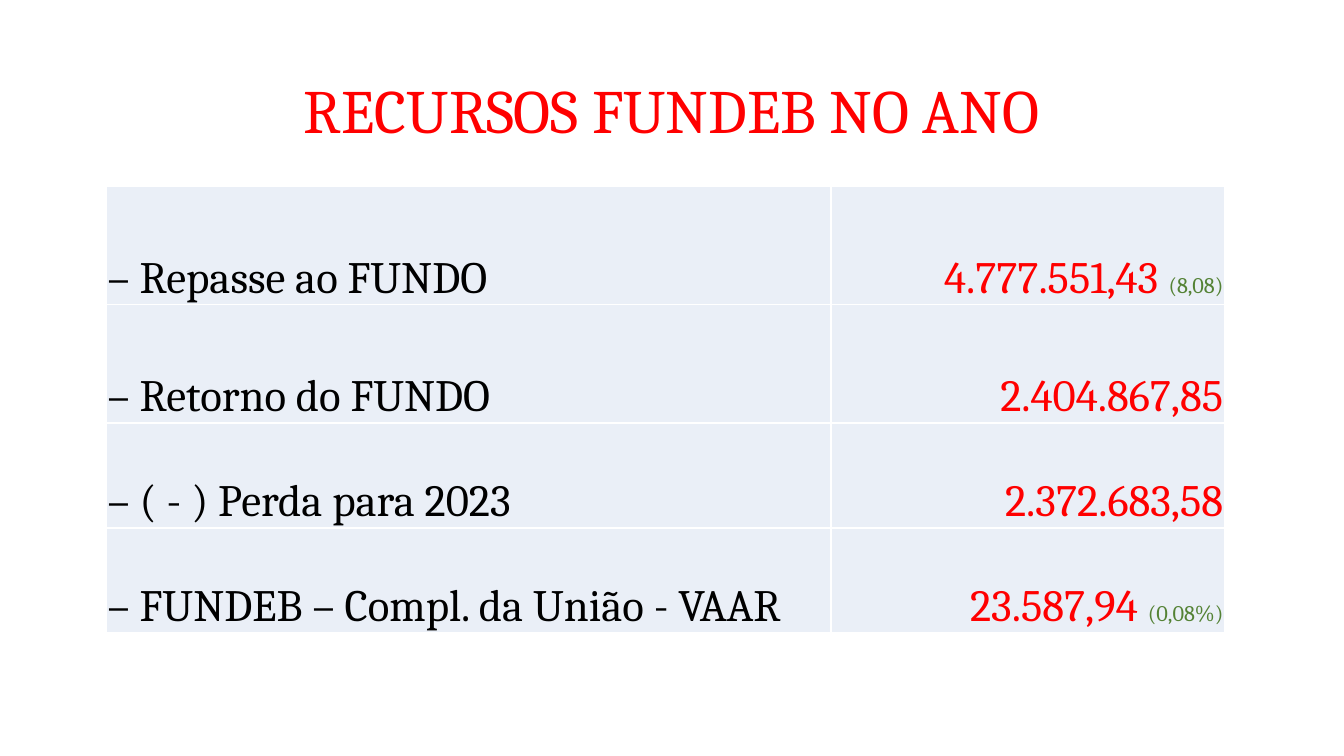
from dataclasses import dataclass

from lxml.etree import SubElement
from pptx import Presentation
from pptx.dml.color import RGBColor
from pptx.enum.text import MSO_ANCHOR, PP_ALIGN
from pptx.oxml.ns import qn
from pptx.util import Pt


@dataclass(frozen=True)
class Theme:
    font: str = "Cambria"
    title_size: int = 44
    body_size: int = 32
    note_size: int = 16
    accent: str = "FF0000"
    text: str = "000000"
    note: str = "548235"
    cell: str = "EAEFF7"
    border: str = "FFFFFF"


@dataclass(frozen=True)
class FundRow:
    label: str
    amount: str
    height: float
    note: str = ""


THEME = Theme()
COLUMN_WIDTHS = (517.6, 281)
ROWS = (
    FundRow("– Repasse ao FUNDO", "4.777.551,43", 84.4, "(8,08)"),
    FundRow("– Retorno do FUNDO", "2.404.867,85", 84.4),
    FundRow("– ( - ) Perda para 2023", "2.372.683,58", 75),
    FundRow("– FUNDEB – Compl. da União - VAAR", "23.587,94", 75, "(0,08%)"),
)


def style_font(font, size: int, color: str) -> None:
    font.name = THEME.font
    font.size = Pt(size)
    font.color.rgb = RGBColor.from_string(color)


def format_cell(cell) -> None:
    cell.margin_left = cell.margin_right = cell.margin_top = Pt(0.75)
    cell.margin_bottom = Pt(0)
    cell.vertical_anchor = MSO_ANCHOR.BOTTOM
    tcPr = cell._tc.get_or_add_tcPr()
    for side in ("lnL", "lnR", "lnT", "lnB"):
        ln = SubElement(tcPr, qn(f"a:{side}"), w=str(Pt(1)))
        fill = SubElement(ln, qn("a:solidFill"))
        SubElement(fill, qn("a:srgbClr"), val=THEME.border)
    cell.fill.solid()
    cell.fill.fore_color.rgb = RGBColor.from_string(THEME.cell)


def fill_row(table, index: int, row: FundRow) -> None:
    table.rows[index].height = Pt(row.height)
    label, amount = table.cell(index, 0), table.cell(index, 1)
    format_cell(label)
    format_cell(amount)

    p = label.text_frame.paragraphs[0]
    p.text = row.label
    style_font(p.font, THEME.body_size, THEME.text)

    p = amount.text_frame.paragraphs[0]
    p.alignment = PP_ALIGN.RIGHT
    if not row.note:
        p.text = row.amount
        style_font(p.font, THEME.body_size, THEME.accent)
        return
    for text, size, color in (
        (f"{row.amount} ", THEME.body_size, THEME.accent),
        (row.note, THEME.note_size, THEME.note),
    ):
        r = p.add_run()
        r.text = text
        style_font(r.font, size, color)


def main() -> None:
    prs = Presentation()
    prs.slide_width, prs.slide_height = Pt(960), Pt(540)
    s = prs.slides.add_slide(prs.slide_layouts[5])

    # Title
    title = s.shapes.title
    title.left, title.top, title.width, title.height = Pt(66), Pt(28.8), Pt(828), Pt(104.4)
    tf = title.text_frame
    tf.vertical_anchor = MSO_ANCHOR.MIDDLE
    p = tf.paragraphs[0]
    p.text = "RECURSOS FUNDEB NO ANO"
    p.alignment = PP_ALIGN.CENTER
    p.line_spacing = 0.9
    style_font(p.font, THEME.title_size, THEME.accent)

    # Fund table
    table = s.shapes.add_table(
        len(ROWS), len(COLUMN_WIDTHS), Pt(76), Pt(133.4),
        Pt(sum(COLUMN_WIDTHS)), Pt(sum(row.height for row in ROWS)),
    ).table
    table.first_row = table.horz_banding = False
    for column, width in zip(table.columns, COLUMN_WIDTHS):
        column.width = Pt(width)
    for index, row in enumerate(ROWS):
        fill_row(table, index, row)

    prs.save("out.pptx")


if __name__ == "__main__":
    main()
